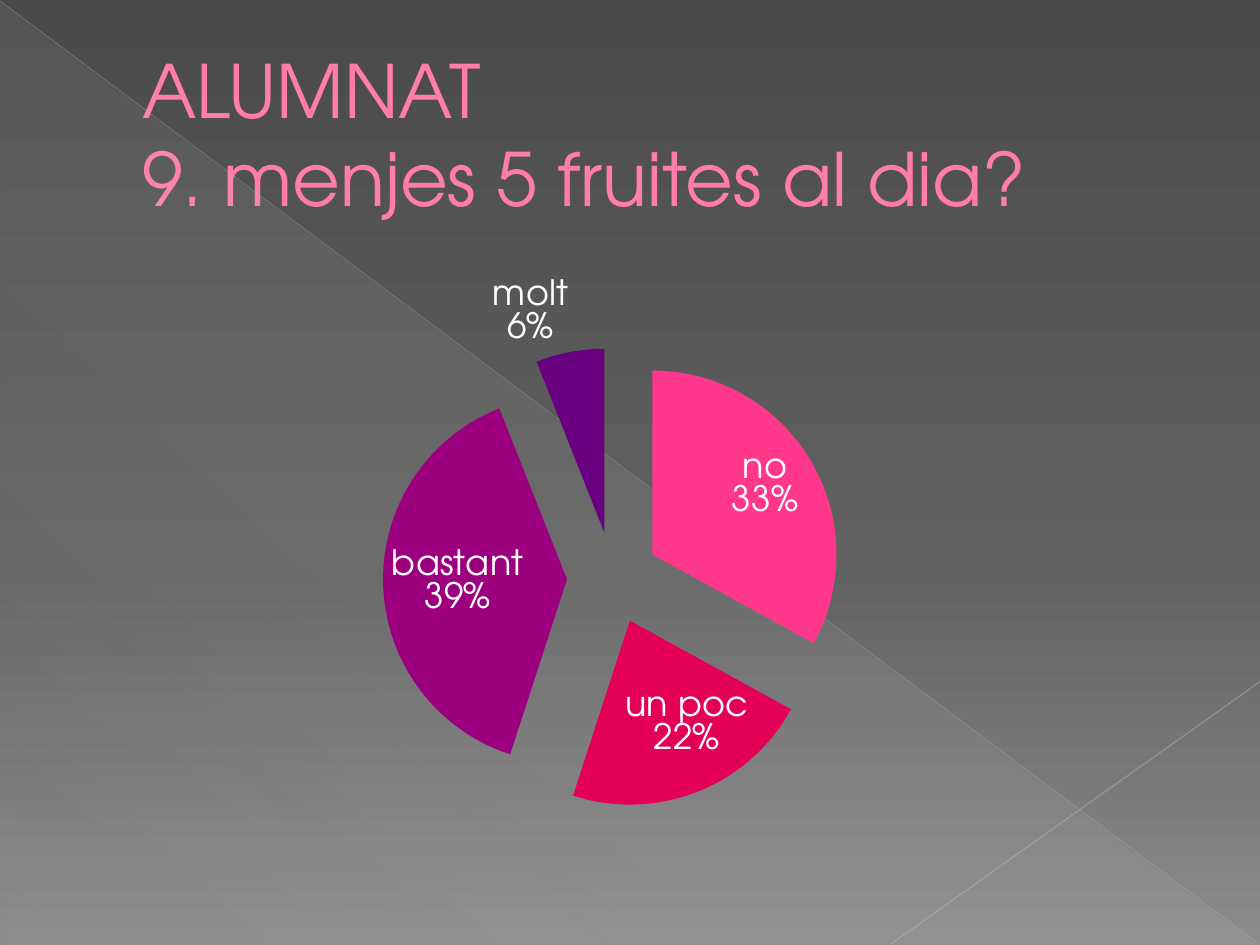
from lxml import etree
from pptx import Presentation
from pptx.chart.data import CategoryChartData
from pptx.dml.color import RGBColor
from pptx.enum.chart import XL_CHART_TYPE, XL_LABEL_POSITION
from pptx.enum.shapes import MSO_CONNECTOR, MSO_SHAPE
from pptx.enum.text import MSO_ANCHOR, MSO_AUTO_SIZE, PP_ALIGN
from pptx.oxml import parse_xml
from pptx.oxml.ns import nsdecls, qn
from pptx.util import Pt

PIE = XL_CHART_TYPE.PIE
BEST = XL_LABEL_POSITION.BEST_FIT
LINE = MSO_CONNECTOR.STRAIGHT
WEDGE = MSO_SHAPE.RIGHT_TRIANGLE
MIDDLE = MSO_ANCHOR.MIDDLE
FIXED = MSO_AUTO_SIZE.NONE
LEFT = PP_ALIGN.LEFT


def color(code):
    return RGBColor.from_string(code)


def fade(fill, owner, stops, angle):
    fill.gradient()
    grad = owner.xpath(".//a:gradFill")[0]
    marks = "".join(
        f'<a:gs pos="{pos * 1000}"><a:srgbClr val="{code}">'
        f'<a:alpha val="{alpha * 1000}"/></a:srgbClr></a:gs>'
        for pos, code, alpha in stops
    )
    new = parse_xml(
        f'<a:gradFill {nsdecls("a")} rotWithShape="1"><a:gsLst>{marks}</a:gsLst>'
        f'<a:lin ang="{angle * 60000}" scaled="0"/></a:gradFill>'
    )
    grad.getparent().replace(grad, new)


class Deck:
    font = "TeX Gyre Adventor"
    pink = "FF7DA7"
    white = "FFFFFF"

    def __init__(self, show):
        self.slide = show.slides.add_slide(show.slide_layouts[5])
        self.shapes = self.slide.shapes

    def style(self, font, size, code):
        font.name = self.font
        font.size = Pt(size)
        font.color.rgb = color(code)

    def back(self, stops, angle):
        fade(self.slide.background.fill, self.slide.element, stops, angle)

    def wedge(self, box, stops, angle):
        shape = self.shapes.add_shape(WEDGE, *map(Pt, box))
        shape.shadow.inherit = False
        shape.line.fill.background()
        fade(shape.fill, shape.element, stops, angle)

    def line(self, ends, code, width, alpha):
        line = self.shapes.add_connector(LINE, *map(Pt, ends))
        line.line.width = Pt(width)
        line.line.color.rgb = color(code)
        tint = line.element.xpath(".//a:ln//a:srgbClr")[0]
        etree.SubElement(tint, qn("a:alpha")).set("val", str(alpha * 1000))
        etree.SubElement(line.element.spPr, qn("a:effectLst"))

    def title(self, box, rows, size, indent):
        head = self.shapes.title
        head.left, head.top, head.width, head.height = map(Pt, box)
        frame = head.text_frame
        frame.auto_size = FIXED
        frame.word_wrap = True
        frame.vertical_anchor = MIDDLE
        para = frame.paragraphs[0]
        para.alignment = LEFT
        props = para._p.get_or_add_pPr()
        props.set("marL", str(Pt(indent)))
        props.set("indent", "0")
        for i, row in enumerate(rows):
            if i:
                para.add_line_break()
            run = para.add_run()
            run.text = row
            self.style(run.font, size, self.pink)

    def pie(self, box, name, slices, burst, plot, size):
        data = CategoryChartData()
        data.categories = [label for label, _, _ in slices]
        data.add_series(name, [value for _, value, _ in slices])
        chart = self.shapes.add_chart(PIE, *map(Pt, box), data).chart
        chart.has_legend = False
        chart.has_title = False
        self.style(chart.font, 10, self.white)
        chart.plots[0].vary_by_categories = True
        series = chart.plots[0].series[0]
        for i, (_, _, code) in enumerate(slices):
            part = series.points[i].format
            part.fill.solid()
            part.fill.fore_color.rgb = color(code)
            part.line.fill.background()
        first = series._element.find(qn("c:dPt"))
        first.addprevious(parse_xml(f'<c:explosion {nsdecls("c")} val="{burst}"/>'))
        self.labels(series, size)
        self.place(chart, plot)

    def labels(self, series, size):
        labels = series.data_labels
        self.style(labels.font, size, self.white)
        labels.show_value = False
        labels.show_percentage = True
        labels.show_category_name = True
        labels.number_format = "0%"
        labels.number_format_is_linked = False
        labels.position = BEST
        root = series._element.find(qn("c:dLbls"))
        mark = parse_xml(f'<c:separator {nsdecls("c")}>\n</c:separator>')
        last = root.find(qn("c:showBubbleSize"))
        if last is None:
            last = root.find(qn("c:showPercent"))
        last.addnext(mark)

    def place(self, chart, plot):
        area = chart._chartSpace.xpath(".//c:plotArea")[0]
        old = area.find(qn("c:layout"))
        if old is not None:
            area.remove(old)
        sizes = "".join(f'<c:{key} val="{val}"/>' for key, val in zip("xywh", plot))
        area.insert(0, parse_xml(
            f'<c:layout {nsdecls("c")}><c:manualLayout><c:layoutTarget val="inner"/>'
            f'<c:xMode val="edge"/><c:yMode val="edge"/>{sizes}'
            '</c:manualLayout></c:layout>'
        ))


def main():
    show = Presentation()
    show.slide_width, show.slide_height = Pt(720), Pt(540)
    deck = Deck(show)
    deck.back([(0, "4A4A4A", 100), (60, "626262", 100), (100, "8C8C8C", 100)], 90)
    deck.wedge((0.5, 1, 719, 539),
               [(0, "D2D2D2", 10), (70, "D2D2D2", 8), (100, "D2D2D2", 1)], 133)
    deck.line((0, 0.5, 719.5, 539.5), "BFBFBF", 0.39, 35)
    deck.line((720, 389.5, 509, 539.5), "C6C6C6", 0.47, 45)
    deck.title((36, 21, 648, 110), ["ALUMNAT", "9. menjes 5 fruites al dia?"], 42, 38)
    slices = [
        ("no", 33, "FF388C"),
        ("un poc", 22, "E40059"),
        ("bastant", 39, "9C007F"),
        ("molt", 6, "68007F"),
    ]
    deck.pie((36, 148.5, 648, 360), "Series 1", slices, 25, (0.28, 0.14, 0.41, 0.73), 20)
    show.save("out.pptx")


if __name__ == "__main__":
    main()
